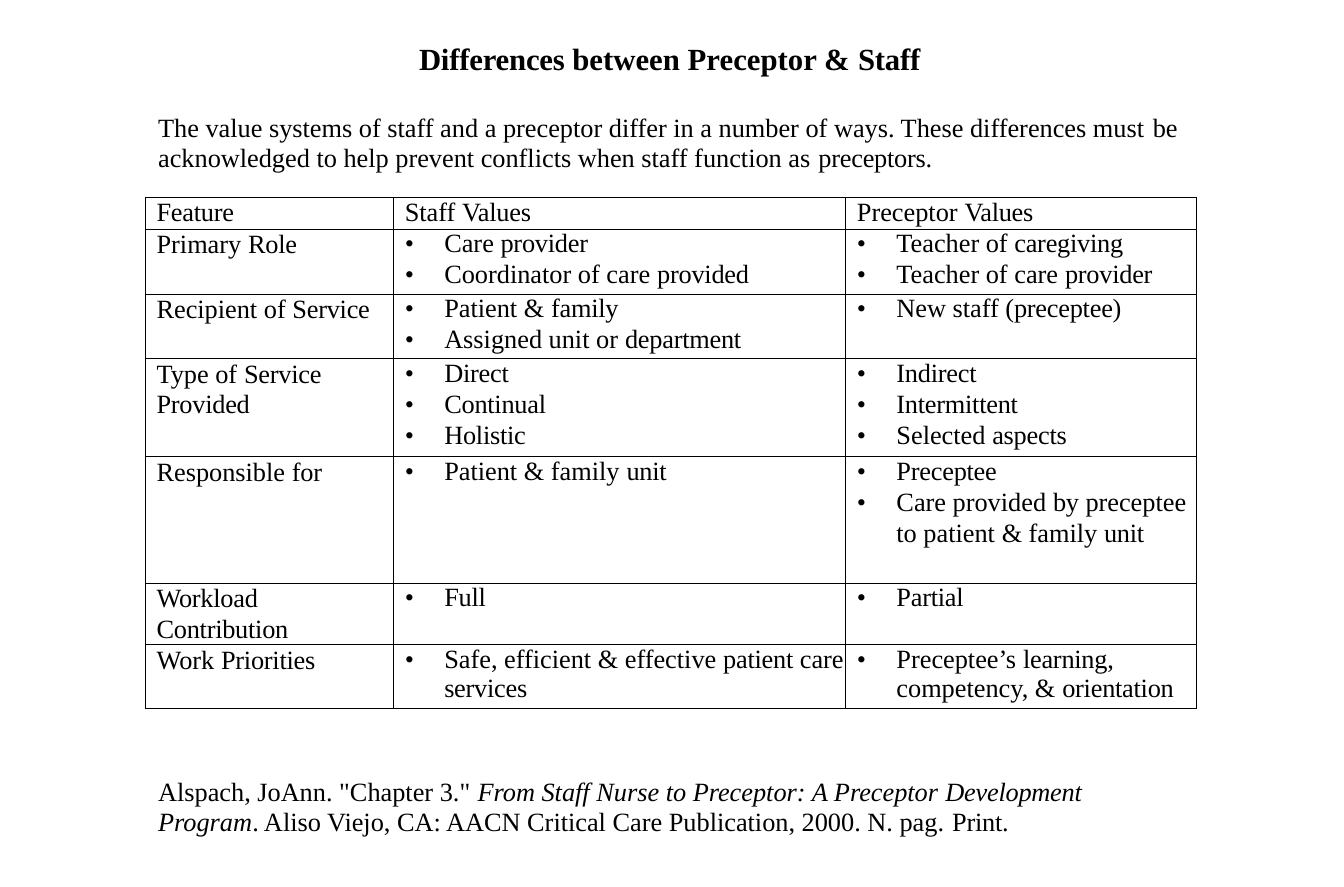
from lxml import etree
from pptx import Presentation
from pptx.dml.color import RGBColor
from pptx.enum.text import MSO_ANCHOR, MSO_AUTO_SIZE, PP_ALIGN
from pptx.oxml.ns import qn
from pptx.util import Inches, Pt

TOP = MSO_ANCHOR.TOP
LEFT = PP_ALIGN.LEFT
FIXED = MSO_AUTO_SIZE.NONE
FONT = "Times New Roman"
COLORS = {"ink": "000000", "page": "FFFFFF"}

# Content: each bar switches slightly tighter letter spacing on or off
TITLE = "|Differences |between Preceptor & |Staff"
INTRO = ("The value systems of staff and a preceptor differ in a number of ways. "
         "These differences must |be |acknowledged to help prevent conflicts when "
         "staff function as |preceptors.")
SOURCE = [  # words, italic
    ('Alspach, JoAnn. "Chapter 3." ', False),
    ("From Staff Nurse to Preceptor: A Preceptor| Development |Program", True),
    (". Aliso Viejo, CA: AACN Critical Care Publication, 2000. N. pag. |Print.", False),
]
HEADS = ["|Feature", "Staff |Values", "Preceptor |Values"]
ROWS = [  # feature, staff values, preceptor values
    ("Primary |Role",
     ["Care |provider", "Coordinator of care |provided"],
     ["Teacher of| caregiving", "Teacher of care |provider"]),
    ("Recipient of| Service",
     ["Patient & |family", "Assigned unit or |department"],
     ["New staff| (preceptee)"]),
    ("Type of |Service Provided",
     ["|Direct", "|Continual", "|Holistic"],
     ["|Indirect", "|Intermittent", "Selected |aspects"]),
    ("Responsible |for",
     ["Patient & family |unit"],
     ["|Preceptee", "Care provided |by |preceptee to patient |& |family |unit"]),
    ("|Workload Contribution", ["|Full"], ["|Partial"]),
    ("Work |Priorities",
     ["Safe, efficient & effective| patient |care |services"],
     ["Preceptee’s |learning, |competency, & |orientation"]),
]
WIDTHS = [1.57, 2.86, 2.22]
HEIGHTS = [0.2, 0.41, 0.41, 0.62, 0.8, 0.39, 0.4]


def write(par, words, size=12, bold=False, italic=False, line=13.8, before=0):
    par.alignment = LEFT
    par.space_before = Pt(before)
    par.line_spacing = Pt(line) if line else 1.0
    for n, part in enumerate(words.split("|")):
        if not part:
            continue
        run = par.add_run()
        run.text = part
        font = run.font
        font.name, font.size = FONT, Pt(size)
        font.bold, font.italic = bold, italic
        font.color.rgb = RGBColor.from_string(COLORS["ink"])
        if n % 2:
            run._r.get_or_add_rPr().set("spc", "-10")


def indent(par, left, hang=0.0, bullet=False):
    props = par._p.get_or_add_pPr()
    props.set("marL", str(Inches(left)))
    props.set("indent", str(Inches(-hang)))
    if bullet:
        etree.SubElement(props, qn("a:buFont"), typeface=FONT)
        etree.SubElement(props, qn("a:buChar"), char="•")


def setup(shape, box, top):
    shape.left, shape.top, shape.width, shape.height = map(Inches, box)
    frame = shape.text_frame
    frame.margin_left = Inches(0.01)
    frame.margin_right = frame.margin_bottom = 0
    frame.margin_top = Inches(top)
    frame.word_wrap = True
    frame.auto_size = FIXED
    frame.vertical_anchor = TOP
    return frame.paragraphs[0]


def border(cell):
    props = cell._tc.get_or_add_tcPr()
    for n, side in enumerate(("lnL", "lnR", "lnT", "lnB")):
        line = etree.Element(qn("a:" + side), w=str(Pt(0.5)))
        fill = etree.SubElement(line, qn("a:solidFill"))
        etree.SubElement(fill, qn("a:srgbClr"), val=COLORS["ink"])
        props.insert(n, line)


def fill_cell(cell, items, line):
    cell.margin_left = cell.margin_right = 0
    cell.margin_top = cell.margin_bottom = 0
    cell.vertical_anchor = TOP
    cell.fill.background()
    border(cell)
    frame = cell.text_frame
    if isinstance(items, str):
        par = frame.paragraphs[0]
        indent(par, 0.07)
        write(par, items, line=line)
        return
    for n, item in enumerate(items):
        par = frame.add_paragraph() if n else frame.paragraphs[0]
        indent(par, 0.32, 0.25, bullet=True)
        write(par, item, line=13.9 if n else None, before=0.3 if n else 0)


def main():
    deck = Presentation()
    deck.slide_width, deck.slide_height = Inches(8.5), Inches(5.61)
    slide = deck.slides.add_slide(deck.slide_layouts[5])
    back = slide.background.fill
    back.solid()
    back.fore_color.rgb = RGBColor.from_string(COLORS["page"])

    # Title and introduction
    par = setup(slide.shapes.title, (2.64, 0.23, 3.25, 0.26), 0.02)
    write(par, TITLE, size=14, bold=True, line=None)
    box = slide.shapes.add_textbox(0, 0, 0, 0)
    write(setup(box, (0.99, 0.65, 6.49, 0.42), 0.06), INTRO)

    # Comparison table
    table = slide.shapes.add_table(
        len(HEIGHTS), len(WIDTHS), Inches(0.92), Inches(1.25),
        Inches(sum(WIDTHS)), Inches(sum(HEIGHTS))).table
    table.first_row = table.horz_banding = False
    for col, width in zip(table.columns, WIDTHS):
        col.width = Inches(width)
    for row, height in zip(table.rows, HEIGHTS):
        row.height = Inches(height)
    for r, row in enumerate([HEADS] + ROWS):
        for c, items in enumerate(row):
            fill_cell(table.cell(r, c), items, 13.8 if r else 13.3)

    # Citation
    box = slide.shapes.add_textbox(0, 0, 0, 0)
    par = setup(box, (0.99, 4.85, 5.91, 0.42), 0.06)
    for words, italic in SOURCE:
        write(par, words, italic=italic)

    deck.save("out.pptx")


if __name__ == "__main__":
    main()
